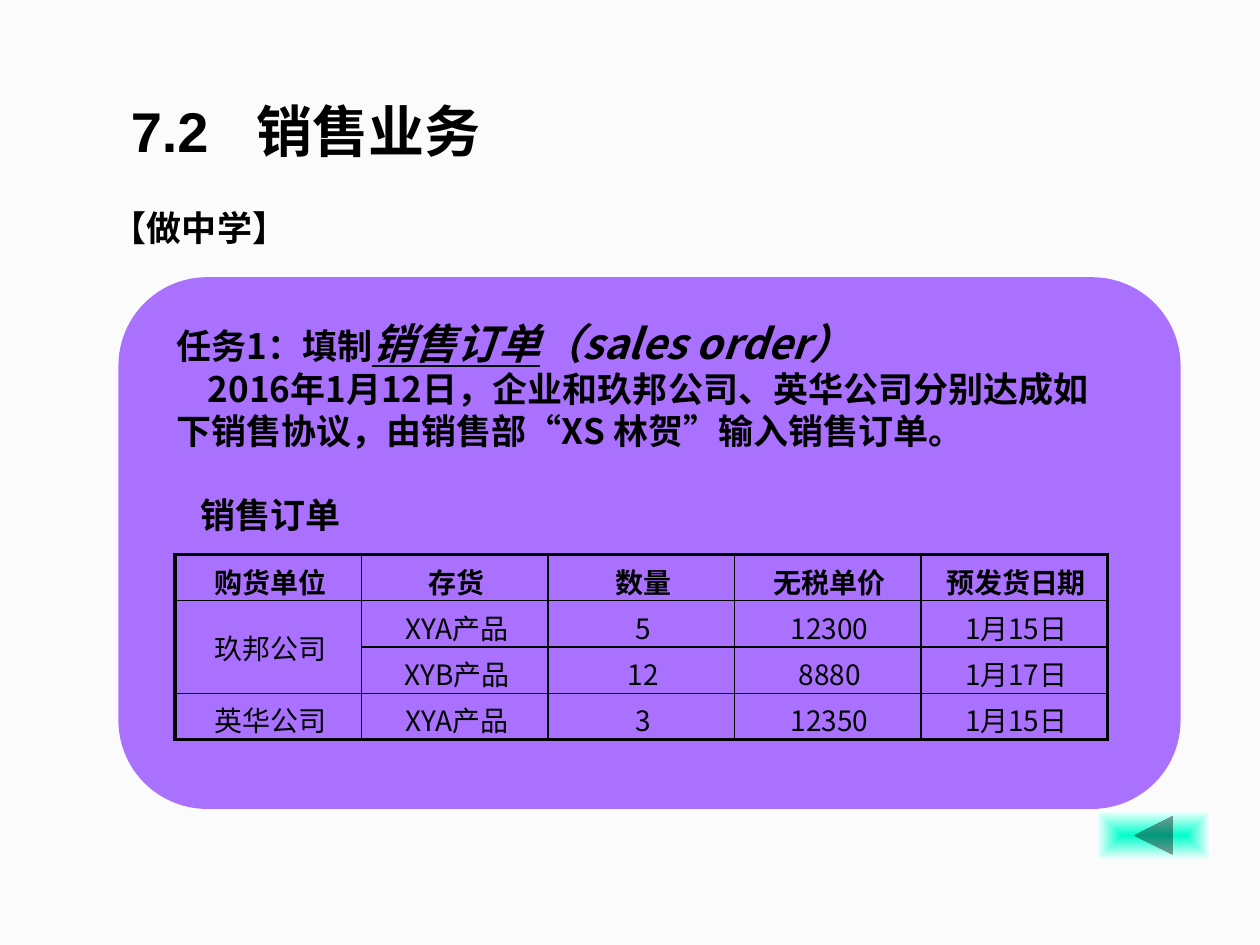
from dataclasses import dataclass

from lxml import etree
from pptx import Presentation
from pptx.dml.color import RGBColor
from pptx.enum.shapes import MSO_SHAPE
from pptx.enum.text import MSO_ANCHOR, PP_ALIGN
from pptx.oxml import parse_xml
from pptx.oxml.ns import nsdecls, qn
from pptx.util import Inches, Pt

ROUNDED = MSO_SHAPE.ROUNDED_RECTANGLE
BACK_BUTTON = MSO_SHAPE.ACTION_BUTTON_BACK_OR_PREVIOUS
TOP, MIDDLE = MSO_ANCHOR.TOP, MSO_ANCHOR.MIDDLE
CENTER = PP_ALIGN.CENTER


@dataclass(frozen=True)
class Theme:
    paper: str = "FBFBFC"
    panel: str = "AA71FF"
    ink: str = "000000"
    glow: str = "00FFCC"
    white: str = "FFFFFF"
    title: int = 32
    term: int = 24
    body: int = 20
    cell: int = 16
    cjk: str = "Noto Sans CJK SC"
    sans: str = "Arial"
    serif: str = "Times New Roman"
    outer_line: float = 2.25
    inner_line: float = 1


class SlideBuilder:
    """Places elements on a grid of 100 columns by 75 rows."""

    def __init__(self, prs, theme):
        self.theme = theme
        self.column = prs.slide_width / 100
        self.row = prs.slide_height / 75
        self.slide = prs.slides.add_slide(prs.slide_layouts[6])
        self.solid(self.slide.background.fill, theme.paper)

    def box(self, left, top, width, height):
        return (int(left * self.column), int(top * self.row),
                int(width * self.column), int(height * self.row))

    def solid(self, fill, color):
        fill.solid()
        fill.fore_color.rgb = RGBColor.from_string(color)

    def style(self, run, size, latin=None, bold=True, italic=False, underline=False):
        font = run.font
        font.name = latin or self.theme.cjk
        font.size, font.bold, font.italic, font.underline = Pt(size), bold, italic, underline
        font.color.rgb = RGBColor.from_string(self.theme.ink)
        east_asian = etree.Element(qn("a:ea"), typeface=self.theme.cjk)
        run._r.rPr.find(qn("a:latin")).addnext(east_asian)

    def shape(self, kind, place, color):
        shape = self.slide.shapes.add_shape(kind, *self.box(*place))
        shape.shadow.inherit = False
        shape.line.fill.background()
        self.solid(shape.fill, color)
        return shape

    def glow_button(self, place):
        """Back button that fades from its centre to white edges."""
        button = self.shape(BACK_BUTTON, place, self.theme.glow)
        gradient = parse_xml(
            f'<a:gradFill {nsdecls("a")} rotWithShape="1"><a:gsLst>'
            f'<a:gs pos="0"><a:srgbClr val="{self.theme.glow}"/></a:gs>'
            f'<a:gs pos="100000"><a:srgbClr val="{self.theme.white}"/></a:gs></a:gsLst>'
            '<a:path path="rect"><a:fillToRect l="50000" t="50000" r="50000" b="50000"/>'
            '</a:path></a:gradFill>')
        properties = button._element.spPr
        properties.replace(properties.find(qn("a:solidFill")), gradient)

    def text(self, place, paragraphs, anchor=TOP, wrap=True):
        """Each paragraph is a list of (wording, run style) pairs."""
        frame = self.slide.shapes.add_textbox(*self.box(*place)).text_frame
        frame.word_wrap = wrap
        frame.vertical_anchor = anchor
        for index, runs in enumerate(paragraphs):
            paragraph = frame.add_paragraph() if index else frame.paragraphs[0]
            for wording, run_style in runs:
                run = paragraph.add_run()
                run.text = wording
                self.style(run, **run_style)
        return frame.paragraphs

    def indent(self, paragraph, first_line, tab=None):
        properties = paragraph._p.get_or_add_pPr()
        properties.set("indent", str(Inches(first_line)))
        if tab:
            stops = etree.SubElement(properties, qn("a:tabLst"))
            etree.SubElement(stops, qn("a:tab"), pos=str(Inches(tab)), algn="l")

    def borders(self, cell, outer_sides):
        properties = cell._tc.get_or_add_tcPr()
        for side in "LRTB":
            width = self.theme.outer_line if side in outer_sides else self.theme.inner_line
            line = etree.SubElement(properties, qn(f"a:ln{side}"), w=str(Pt(width)))
            fill = etree.SubElement(line, qn("a:solidFill"))
            etree.SubElement(fill, qn("a:srgbClr"), val=self.theme.ink)

    def table(self, place, rows, merged):
        """merged holds the first and last (row, column) of one joined cell."""
        last_row, last_column = len(rows) - 1, len(rows[0]) - 1
        table = self.slide.shapes.add_table(
            last_row + 1, last_column + 1, *self.box(*place)).table
        table.first_row = table.horz_banding = False
        for r, row in enumerate(rows):
            for c, wording in enumerate(row):
                cell = table.cell(r, c)
                edges = {"L": c == 0, "R": c == last_column, "T": r == 0, "B": r == last_row}
                self.borders(cell, [side for side, outer in edges.items() if outer])
                cell.fill.background()
                cell.margin_left, cell.margin_right = Inches(0.1), Inches(0.07)
                cell.margin_top, cell.margin_bottom = Inches(0.05), 0
                if wording:
                    cell.text_frame.text = wording
                    paragraph = cell.text_frame.paragraphs[0]
                    paragraph.alignment = CENTER
                    self.style(paragraph.runs[0], self.theme.cell, bold=r == 0)
        first, last = merged
        joined = table.cell(*first)
        joined.merge(table.cell(*last))
        joined.vertical_anchor = MIDDLE
        joined.margin_bottom = joined.margin_top


def main():
    prs = Presentation()
    prs.slide_width, prs.slide_height = Inches(10), Inches(7.5)
    theme = Theme()
    page = SlideBuilder(prs, theme)

    page.shape(ROUNDED, (9.4, 22, 84.3, 42.2), theme.panel)

    body = {"size": theme.body}
    quote = {"size": theme.body, "latin": theme.serif}
    term = {"size": theme.term, "italic": True}
    task, agreement, caption = page.text((13, 24.6, 77.1, 18.5), [
        [("任务1：填制", body), ("销售订单", {**term, "underline": True}),
         ("（sales order）", term)],
        [("2016年1月12日，企业和玖邦公司、英华公司分别达成如下销售协议，由销售部", body),
         ("“", quote), ("XS 林贺", body), ("”", quote), ("输入销售订单。", body)],
        [("销售订单", body)],
    ], anchor=MIDDLE)
    task.line_spacing = Pt(29)
    agreement.line_spacing = caption.line_spacing = Pt(24)
    caption.space_before = Pt(24)
    page.indent(agreement, 0.25)
    page.indent(caption, 0.19)

    page.glow_button((87, 64.3, 9.1, 4))
    page.text((7.9, 15.9, 16, 4.3), [[("【做中学】", quote)]], anchor=MIDDLE, wrap=False)
    heading, = page.text((9.4, 7.2, 57.7, 6.4), [
        [("7.2\t销售业务", {"size": theme.title, "latin": theme.sans})]])
    page.indent(heading, 0, tab=0.97)

    page.table((13.9, 44, 74, 14.7), [
        ["购货单位", "存货", "数量", "无税单价", "预发货日期"],
        ["玖邦公司", "XYA产品", "5", "12300", "1月15日"],
        ["", "XYB产品", "12", "8880", "1月17日"],
        ["英华公司", "XYA产品", "3", "12350", "1月15日"],
    ], merged=((1, 0), (2, 0)))

    prs.save("out.pptx")


if __name__ == "__main__":
    main()
